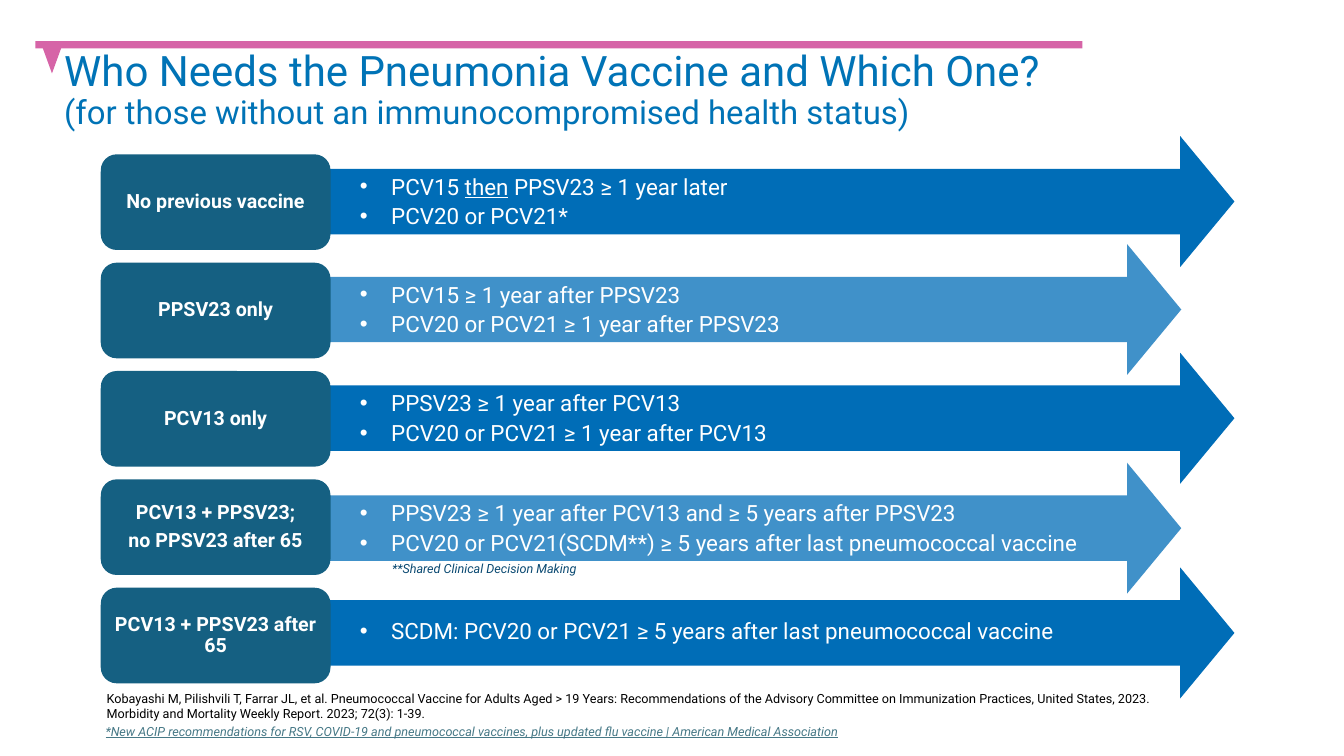
"""Builds a slide on which pneumonia vaccine follows each vaccination history."""
from lxml import etree
from pptx import Presentation
from pptx.dml.color import RGBColor
from pptx.enum.shapes import MSO_SHAPE
from pptx.enum.text import MSO_ANCHOR, PP_ALIGN
from pptx.oxml.ns import qn
from pptx.util import Cm, Pt

RECTANGLE = MSO_SHAPE.RECTANGLE
TRIANGLE = MSO_SHAPE.ISOSCELES_TRIANGLE
ARROW = MSO_SHAPE.RIGHT_ARROW
ROUNDED = MSO_SHAPE.ROUNDED_RECTANGLE
TOP, MIDDLE = MSO_ANCHOR.TOP, MSO_ANCHOR.MIDDLE
LEFT, CENTER = PP_ALIGN.LEFT, PP_ALIGN.CENTER

PINK, BLUE, TEAL, WHITE = "D664A7", "006DB7", "156082", "FFFFFF"
TITLE_BLUE, NOTE_BLUE, LINK_BLUE, BLACK = "0073B6", "0B4A72", "467886", "000000"

FIRST_BOX_TOP, BOX_PITCH = 3.89, 2.73
LONG_ARROW, SHORT_ARROW = 22.96, 21.62
ROWS = [
    (["No previous vaccine"], 3.43, 13.34,
     ["PCV15 _then_ PPSV23 ≥ 1 year later", "PCV20 or PCV21*"]),
    (["PPSV23 only"], 6.15, 14.3,
     ["PCV15 ≥ 1 year after PPSV23", "PCV20 or PCV21 ≥ 1 year after PPSV23"]),
    (["PCV13 only"], 8.89, 14.3,
     ["PPSV23 ≥ 1 year after PCV13", "PCV20 or PCV21 ≥ 1 year after PCV13"]),
    (["PCV13 + PPSV23;", "no PPSV23 after 65"], 11.66, 19.51,
     ["PPSV23 ≥ 1 year after PCV13 and ≥ 5 years after PPSV23",
      "PCV20 or PCV21(SCDM**) ≥ 5 years after last pneumococcal vaccine"]),
    (["PCV13 + PPSV23 after 65"], 14.3, 19.79,
     ["SCDM: PCV20 or PCV21 ≥ 5 years after last pneumococcal vaccine"]),
]
CITATION = (
    "Kobayashi M, Pilishvili T, Farrar JL, et al. Pneumococcal Vaccine for Adults "
    "Aged > 19 Years: Recommendations of the Advisory Committee on Immunization "
    "Practices, United States, 2023. Morbidity and Mortality Weekly Report. 2023; "
    "72(3): 1-39."
)
UPDATE = (
    "*New ACIP recommendations for RSV, COVID-19 and pneumococcal vaccines, "
    "plus updated flu vaccine | American Medical Association"
)


def rgb(value):
    """Turn a hex string into a colour."""
    return RGBColor.from_string(value)


class SlideBuilder:
    """Holds the font and the current slide and adds elements to it."""

    def __init__(self, slide, font_name):
        self.slide = slide
        self.font_name = font_name

    def style(self, run, size, color, bold=False, italic=False, underline=False):
        """Format one run."""
        font = run.font
        font.name, font.size = self.font_name, Pt(size)
        font.color.rgb = rgb(color)
        font.bold, font.italic, font.underline = bold, italic, underline

    def shape(self, kind, left, top, width, height, fill, opacity=100):
        """Add a borderless preset shape."""
        shape = self.slide.shapes.add_shape(
            kind, Cm(left), Cm(top), Cm(width), Cm(height))
        shape.shadow.inherit = False
        shape.line.fill.background()
        shape.fill.solid()
        shape.fill.fore_color.rgb = rgb(fill)
        if opacity < 100:
            color = shape.fill._xPr.find(".//" + qn("a:srgbClr"))
            etree.SubElement(color, qn("a:alpha"), val=str(opacity * 1000))
        return shape

    def frame(self, shape, anchor=MIDDLE, side=0.15, edge=0.15):
        """Set wrapping, anchor and insets of a shape's text."""
        frame = shape.text_frame
        frame.word_wrap = True
        frame.vertical_anchor = anchor
        frame.margin_left = frame.margin_right = Cm(side)
        frame.margin_top = frame.margin_bottom = Cm(edge)
        return frame

    def text_box(self, left, top, width, height, **layout):
        """Add a text box and return its text frame."""
        box = self.slide.shapes.add_textbox(
            Cm(left), Cm(top), Cm(width), Cm(height))
        return self.frame(box, **layout)

    def text(self, frame, lines, size, color, align=LEFT, spacing=1.0, after=0, **look):
        """Write plain paragraphs into a text frame."""
        frame.text = "\n".join(lines)
        for paragraph in frame.paragraphs:
            paragraph.alignment = align
            paragraph.line_spacing = spacing
            paragraph.space_after = Pt(after)
            for run in paragraph.runs:
                self.style(run, size, color, **look)

    def title(self, heading, subheading):
        """Add the two-line title."""
        frame = self.text_box(1.37, 1.14, 25.98, 2.62, anchor=TOP, side=0.25, edge=0.13)
        paragraph = frame.paragraphs[0]
        paragraph.line_spacing = 0.9
        first = paragraph.add_run()
        first.text = heading
        self.style(first, 30, TITLE_BLUE)
        paragraph.add_line_break()
        second = paragraph.add_run()
        second.text = subheading
        self.style(second, 23.5, TITLE_BLUE)

    def arrow(self, top, width, opacity):
        """Add one recommendation arrow."""
        arrow = self.shape(ARROW, 8.15, top, width, 3.3, BLUE, opacity)
        arrow.adjustments[0], arrow.adjustments[1] = 0.5, 0.414

    def history(self, top, lines):
        """Add one labelled vaccination history box."""
        box = self.shape(ROUNDED, 2.54, top, 5.79, 2.41, TEAL)
        self.text(self.frame(box, side=0.22), lines, 14, WHITE,
                  align=CENTER, spacing=0.9, after=4.9, bold=True)

    def bullets(self, top, width, lines):
        """Add a bulleted list in which underscores mark underlined words."""
        frame = self.text_box(8.92, top, width, 1.57)
        single = len(lines) == 1
        for index, line in enumerate(lines):
            paragraph = frame.add_paragraph() if index else frame.paragraphs[0]
            properties = paragraph._p.get_or_add_pPr()
            properties.set("marL", str(Cm(0.79)))
            properties.set("indent", str(-Cm(0.79)))
            etree.SubElement(properties, qn("a:buFont"), typeface="Arial")
            etree.SubElement(properties, qn("a:buChar"), char="•")
            paragraph.line_spacing = 0.9 if single else 1.0
            paragraph.space_before = Pt(1 if index else 0)
            paragraph.space_after = Pt(5.6 if single else 1)
            for part, words in enumerate(line.split("_")):
                run = paragraph.add_run()
                run.text = words
                self.style(run, 16, WHITE, underline=part % 2 == 1)


def main():
    """Build and save the slide."""
    presentation = Presentation()
    presentation.slide_width, presentation.slide_height = Cm(33.87), Cm(19.05)
    slide = presentation.slides.add_slide(presentation.slide_layouts[6])
    builder = SlideBuilder(slide, "Roboto")

    builder.shape(RECTANGLE, 0.89, 1.04, 26.39, 0.18, PINK)
    builder.shape(TRIANGLE, 1.07, 1.19, 0.48, 0.66, PINK).rotation = 180

    for index, (_, arrow_top, _, _) in reversed(list(enumerate(ROWS))):
        if index % 2:
            builder.arrow(arrow_top, SHORT_ARROW, 75)
        else:
            builder.arrow(arrow_top, LONG_ARROW, 100)

    builder.title("Who Needs the Pneumonia Vaccine and Which One?",
                  "(for those without an immunocompromised health status)")

    for index, (label, arrow_top, text_width, advice) in enumerate(ROWS):
        builder.history(FIRST_BOX_TOP + index * BOX_PITCH, label)
        builder.bullets(arrow_top + 0.85, text_width, advice)

    builder.text(builder.text_box(2.54, 17.35, 27.23, 0.89), [CITATION], 9, BLACK)
    update = builder.text_box(2.41, 18.08, 27.03, 0.61, anchor=TOP, side=0.25, edge=0.13)
    builder.text(update, [UPDATE], 9, LINK_BLUE, spacing=1.07, after=8,
                 italic=True, underline=True)
    builder.text(builder.text_box(9.73, 14.07, 5.23, 0.51),
                 ["**Shared Clinical Decision Making"], 9, NOTE_BLUE, italic=True)

    presentation.save("out.pptx")


if __name__ == "__main__":
    main()
